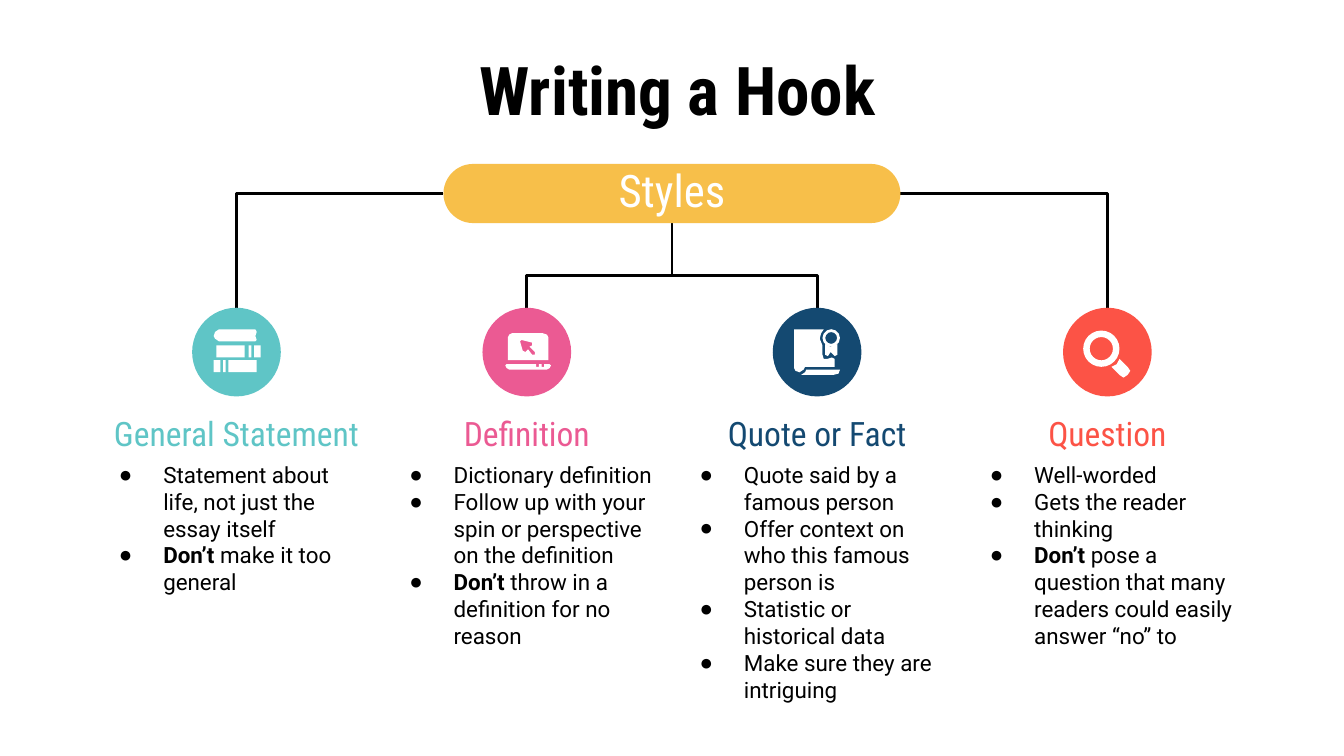
from dataclasses import dataclass

from lxml.etree import SubElement
from pptx import Presentation
from pptx.dml.color import RGBColor
from pptx.enum.shapes import MSO_CONNECTOR, MSO_SHAPE
from pptx.enum.text import MSO_ANCHOR, PP_ALIGN
from pptx.oxml.ns import qn
from pptx.util import Inches, Pt


@dataclass(frozen=True)
class Theme:
    black: str = "000000"
    white: str = "FFFFFF"
    yellow: str = "F7BF4A"
    teal: str = "5FC5C6"
    pink: str = "EB5A93"
    navy: str = "144971"
    red: str = "FC5346"
    display_font: str = "Roboto Condensed"
    body_font: str = "Roboto"
    bullet_font: str = "Arial"
    title_size: int = 36
    banner_size: int = 24
    heading_size: int = 18
    body_size: int = 12
    line_width: float = 1.5


THEME = Theme()

PAGE_WIDTH = 10
PAGE_HEIGHT = PAGE_WIDTH * 9 / 16
CENTER = PAGE_WIDTH / 2
COLUMN_STEP = 2.16
CIRCLE_TOP = 2.29
CIRCLE_SIZE = 0.66
CIRCLE_MIDDLE = CIRCLE_TOP + CIRCLE_SIZE / 2
COLUMN_WIDTH = 2.09
BANNER_LEFT, BANNER_TOP, BANNER_WIDTH, BANNER_HEIGHT = 3.3, 1.22, 3.4, 0.44


def paint(shape, color):
    shape.shadow.inherit = False
    shape.fill.solid()
    shape.fill.fore_color.rgb = RGBColor.from_string(color)
    shape.line.fill.background()


def add_filled(page, kind, left, top, width, height, color, adjust=None):
    shape = page.shapes.add_shape(
        kind, Inches(left), Inches(top), Inches(width), Inches(height))
    paint(shape, color)
    if adjust is not None:
        shape.adjustments[0] = adjust
    return shape


def add_pill(page, left, top, width, height, color):
    return add_filled(page, MSO_SHAPE.ROUNDED_RECTANGLE, left, top, width, height, color, 0.5)


def add_outline(page, x, y, *contours):
    """Draw a white shape from closed contours given as offsets from x, y; inner ones are holes."""
    builder = None
    for contour in contours:
        points = [(Inches(x + dx), Inches(y + dy)) for dx, dy in contour]
        if builder is None:
            builder = page.shapes.build_freeform(*points[0])
        else:
            builder.move_to(*points[0])
        builder.add_line_segments(points[1:], close=True)
    paint(builder.convert_to_shape(), THEME.white)


def set_frame(shape, anchor=MSO_ANCHOR.TOP, left=0.1, top=0.1):
    frame = shape.text_frame
    frame.word_wrap = True
    frame.vertical_anchor = anchor
    frame.margin_left, frame.margin_top = Inches(left), Inches(top)
    frame.margin_right = frame.margin_bottom = Inches(0.1)
    return frame


def add_span(para, text, font, size, color, bold=False):
    span = para.add_run()
    span.text = text
    span.font.name = font
    span.font.size = Pt(size)
    span.font.bold = bold
    span.font.color.rgb = RGBColor.from_string(color)


def add_centered(frame, text, size, color, bold=False):
    para = frame.paragraphs[0]
    para.alignment = PP_ALIGN.CENTER
    add_span(para, text, THEME.display_font, size, color, bold)


def add_box(page, left, top, width, height):
    return page.shapes.add_textbox(Inches(left), Inches(top), Inches(width), Inches(height))


def set_bullet(para):
    properties = para._p.get_or_add_pPr()
    properties.set("marL", str(Inches(0.5)))
    properties.set("indent", str(-Inches(0.33)))
    color = SubElement(properties, qn("a:buClr"))
    SubElement(color, qn("a:srgbClr"), val=THEME.black)
    SubElement(properties, qn("a:buFont"), typeface=THEME.bullet_font)
    SubElement(properties, qn("a:buChar"), char="●")


def add_bullets(page, items, left, top, width, height):
    """Fill a bulleted box; text between asterisks is bold."""
    frame = set_frame(add_box(page, left, top, width, height), left=0)
    for index, item in enumerate(items):
        para = frame.add_paragraph() if index else frame.paragraphs[0]
        set_bullet(para)
        for part, text in enumerate(item.split("*")):
            if text:
                add_span(para, text, THEME.body_font, THEME.body_size, THEME.black, part % 2 == 1)


def add_elbow(page, start, end, kind="bentConnector3", rotation=0, bend=None):
    line = page.shapes.add_connector(
        MSO_CONNECTOR.ELBOW, *(Inches(value) for value in (*start, *end)))
    line.line.color.rgb = RGBColor.from_string(THEME.black)
    line.line.width = Pt(THEME.line_width)
    properties = line._element.spPr
    SubElement(properties, qn("a:effectLst"))
    geometry = properties.find(qn("a:prstGeom"))
    geometry.set("prst", kind)
    if rotation:
        properties.find(qn("a:xfrm")).set("rot", str(rotation * 60000))
    if bend is not None:
        guides = geometry.find(qn("a:avLst"))
        if guides is None:
            guides = SubElement(geometry, qn("a:avLst"))
        SubElement(guides, qn("a:gd"), name="adj1", fmla=f"val {round(bend * 100000)}")


def add_branches(page):
    banner_middle = BANNER_TOP + BANNER_HEIGHT / 2
    banner_bottom = BANNER_TOP + BANNER_HEIGHT
    drop, reach = CIRCLE_TOP - banner_bottom, COLUMN_STEP / 2
    middle = (banner_bottom + CIRCLE_TOP) / 2
    for side, rotation in ((-1, 90), (1, 270)):
        add_elbow(page, (CENTER + side * BANNER_WIDTH / 2, banner_middle),
                  (CENTER + side * 1.5 * COLUMN_STEP, CIRCLE_TOP), "bentConnector2")
        # The unrotated frame of a vertical elbow has its sides swapped.
        x = CENTER + side * reach / 2
        add_elbow(page, (x + side * drop / 2, middle - reach / 2),
                  (x - side * drop / 2, middle + reach / 2), rotation=rotation, bend=0.62)


def draw_books(page, x, y):
    add_outline(page, x, y, [
        (-0.13, -0.17), (0.14, -0.17), (0.15, -0.15), (0.14, -0.12), (0.15, -0.09),
        (0.14, -0.08), (-0.13, -0.08), (-0.16, -0.1), (-0.17, -0.12), (-0.16, -0.15)])
    for top, parts in ((-0.05, ((-0.15, 0.21), (0.09, 0.02), (0.13, 0.05))),
                       (0.06, ((-0.17, 0.05), (-0.1, 0.02), (-0.06, 0.21)))):
        for left, width in parts:
            add_filled(page, MSO_SHAPE.RECTANGLE, x + left, y + top, width, 0.09, THEME.white)


def draw_laptop(page, x, y):
    screen = [(-0.14, 0.06), (-0.14, -0.11), (-0.13, -0.13), (-0.11, -0.14),
              (0.12, -0.14), (0.15, -0.13), (0.16, -0.11), (0.16, 0.06)]
    pointer = [(-0.05, -0.08), (-0.04, -0.09), (0.04, -0.07), (0.04, -0.05), (0.02, -0.04),
               (0.06, 0), (0.06, 0.02), (0.04, 0.02), (0.01, -0.02), (-0.01, 0), (-0.03, -0.01)]
    base = [(-0.16, 0.1), (-0.15, 0.09), (0.07, 0.09), (0.07, 0.11), (0.09, 0.11),
            (0.09, 0.09), (0.11, 0.09), (0.11, 0.11), (0.13, 0.11), (0.13, 0.09),
            (0.17, 0.09), (0.18, 0.1), (0.17, 0.12), (0.15, 0.13), (-0.13, 0.13), (-0.15, 0.12)]
    add_outline(page, x, y, screen, pointer)
    add_outline(page, x, y, base)


def draw_certificate(page, x, y):
    add_outline(page, x, y, [
        (-0.17, -0.17), (0.05, -0.17), (0.03, -0.14), (0.02, -0.1), (0.04, -0.05),
        (0.04, 0.02), (0.05, 0.05), (0.08, 0.05), (0.11, 0.04), (0.13, 0.05),
        (0.13, 0.11), (-0.09, 0.11), (-0.1, 0.13), (-0.13, 0.15), (-0.16, 0.14), (-0.17, 0.12)])
    add_outline(page, x, y, [
        (-0.08, 0.13), (0.17, 0.13), (0.16, 0.16), (0.12, 0.17), (-0.12, 0.17), (-0.09, 0.15)])
    add_filled(page, MSO_SHAPE.DONUT, x + 0.04, y - 0.17, 0.13, 0.13, THEME.white, 0.16)
    add_outline(page, x, y, [
        (0.06, -0.06), (0.1, -0.04), (0.15, -0.06), (0.15, 0.02), (0.13, 0.03),
        (0.1, 0), (0.08, 0.03), (0.06, 0.02)])


def draw_magnifier(page, x, y):
    add_filled(page, MSO_SHAPE.DONUT, x - 0.18, y - 0.16, 0.27, 0.27, THEME.white, 0.18)
    add_outline(page, x, y, [
        (0.09, 0.05), (0.15, 0.11), (0.17, 0.14), (0.15, 0.17), (0.12, 0.19),
        (0.09, 0.17), (0.03, 0.11), (0.07, 0.09)])


def add_style(page, x, name, color, draw_icon, items, height):
    left = x - COLUMN_WIDTH / 2
    heading = set_frame(add_box(page, left, 3.05, COLUMN_WIDTH, 0.35), MSO_ANCHOR.MIDDLE)
    add_centered(heading, name, THEME.heading_size, color)
    add_bullets(page, items, left, 3.33, COLUMN_WIDTH, height)
    add_pill(page, x - CIRCLE_SIZE / 2, CIRCLE_TOP, CIRCLE_SIZE, CIRCLE_SIZE, color)
    draw_icon(page, x, CIRCLE_MIDDLE)


STYLES = [
    ("General Statement", THEME.teal, draw_books,
     ["Statement about life, not just the essay itself", "*Don’t *make it too general"], 1.22),
    ("Definition", THEME.pink, draw_laptop,
     ["Dictionary definition", "Follow up with your spin or perspective on the definition",
      "*Don’t* throw in a definition for no reason"], 2.21),
    ("Quote or Fact", THEME.navy, draw_certificate,
     ["Quote said by a famous person", "Offer context on who this famous person is",
      "Statistic or historical data", "Make sure they are intriguing"], 2.03),
    ("Question", THEME.red, draw_magnifier,
     ["Well-worded", "Gets the reader thinking",
      "*Don’t* pose a question that many readers could easily answer “no” to"], 1.68),
]


def main():
    deck = Presentation()
    deck.slide_width, deck.slide_height = Inches(PAGE_WIDTH), Inches(PAGE_HEIGHT)
    page = deck.slides.add_slide(deck.slide_layouts[6])
    title = set_frame(add_box(page, 0.38, 0.26, 9.32, 0.63))
    add_centered(title, "Writing a Hook", THEME.title_size, THEME.black, bold=True)
    add_branches(page)
    banner = add_pill(page, BANNER_LEFT, BANNER_TOP, BANNER_WIDTH, BANNER_HEIGHT, THEME.yellow)
    add_centered(set_frame(banner, MSO_ANCHOR.MIDDLE, top=0.05),
                 "Styles", THEME.banner_size, THEME.white)
    for index, style in enumerate(STYLES):
        add_style(page, CENTER + (index - 1.5) * COLUMN_STEP, *style)
    deck.save("out.pptx")


if __name__ == "__main__":
    main()
